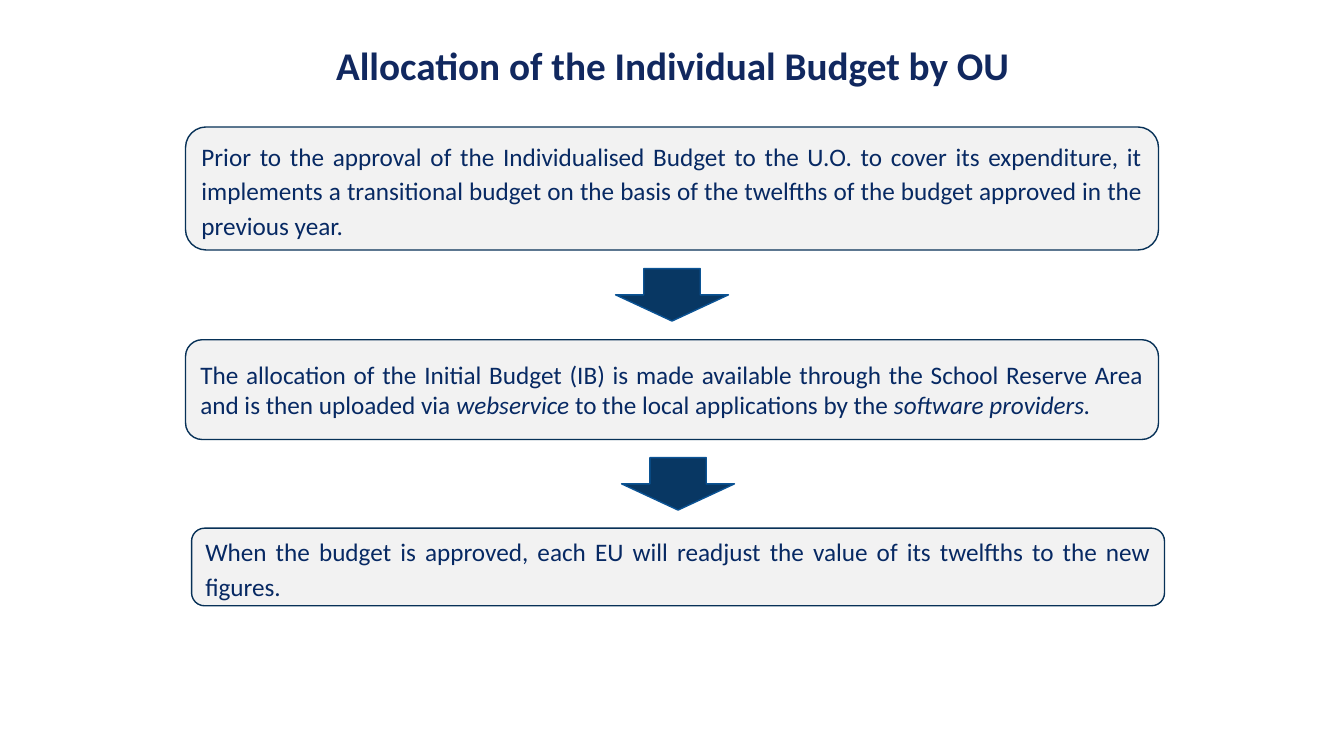
from pptx import Presentation
from pptx.dml.color import RGBColor
from pptx.enum.shapes import MSO_SHAPE as Shape
from pptx.enum.text import MSO_ANCHOR as Anchor, PP_ALIGN as Align
from pptx.util import Inches, Pt

WIDTH, HEIGHT = 13.33, 7.5
FONT = "Calibri"
COLORS = {
    "title": "11285F", "text": "072963",
    "step": "F2F2F2", "step line": "073157",
    "arrow": "083763", "arrow line": "0B5394",
}
TITLE = "Allocation of the Individual Budget by OU"
TITLE_AREA = (0.92, 0.2, 11.5, 0.95)

# Each step: left, top, height, line spacing, space after, runs as (text, italic)
STEPS = [
    (1.84, 1.26, 1.22, 1.15, 8, [
        ("Prior to the approval of the Individualised Budget to the U.O. to cover "
         "its expenditure, it implements a transitional budget on the basis of the "
         "twelfths of the budget approved in the previous year.", False)]),
    (1.84, 3.37, 0.99, 1.0, 0, [
        ("The allocation of the Initial Budget (IB) is made available through the "
         "School Reserve Area and is then uploaded via ", False),
        ("webservice", True),
        (" to the local applications by the ", False),
        ("software providers.", True)]),
    (1.9, 5.24, 0.77, 1.15, 8, [
        ("When the budget is approved, each EU will readjust the value of its "
         "twelfths to the new figures.", False)]),
]
STEP_WIDTH = 9.65
ARROW_WIDTH, ARROW_HEIGHT = 1.12, 0.52


def color(name):
    return RGBColor.from_string(COLORS[name])


def add_block(page, kind, area, name):
    block = page.shapes.add_shape(kind, *map(Inches, area))
    block.shadow.inherit = False
    block.fill.solid()
    block.fill.fore_color.rgb = color(name)
    block.line.color.rgb = color(name + " line")
    block.line.width = Pt(1)
    return block


def write(box, runs, size, name, align, line_spacing):
    """Fill a box with one paragraph and return that paragraph."""
    frame = box.text_frame
    frame.word_wrap = True
    frame.vertical_anchor = Anchor.MIDDLE
    para = frame.paragraphs[0]
    para.alignment = align
    para.line_spacing = line_spacing
    para.font.name = FONT
    para.font.size = Pt(size)
    para.font.color.rgb = color(name)
    for text, italic in runs:
        span = para.add_run()
        span.text = text
        if italic:
            span.font.italic = True
    return para


def main():
    deck = Presentation()
    deck.slide_width, deck.slide_height = Inches(WIDTH), Inches(HEIGHT)
    page = deck.slides.add_slide(deck.slide_layouts[6])

    title = page.shapes.add_textbox(*map(Inches, TITLE_AREA))
    write(title, [(TITLE, False)], 28, "title", Align.CENTER, 0.9).font.bold = True

    previous_bottom = None
    for left, top, height, line_spacing, space_after, runs in STEPS:
        if previous_bottom is not None:
            # The arrow is centred in the gap above the step it leads to
            arrow_left = left + (STEP_WIDTH - ARROW_WIDTH) / 2
            arrow_top = (previous_bottom + top - ARROW_HEIGHT) / 2
            add_block(page, Shape.DOWN_ARROW,
                      (arrow_left, arrow_top, ARROW_WIDTH, ARROW_HEIGHT), "arrow")
        step = add_block(page, Shape.ROUNDED_RECTANGLE,
                         (left, top, STEP_WIDTH, height), "step")
        para = write(step, runs, 18, "text", Align.JUSTIFY, line_spacing)
        para.space_after = Pt(space_after)
        previous_bottom = top + height

    deck.save("out.pptx")


if __name__ == "__main__":
    main()
